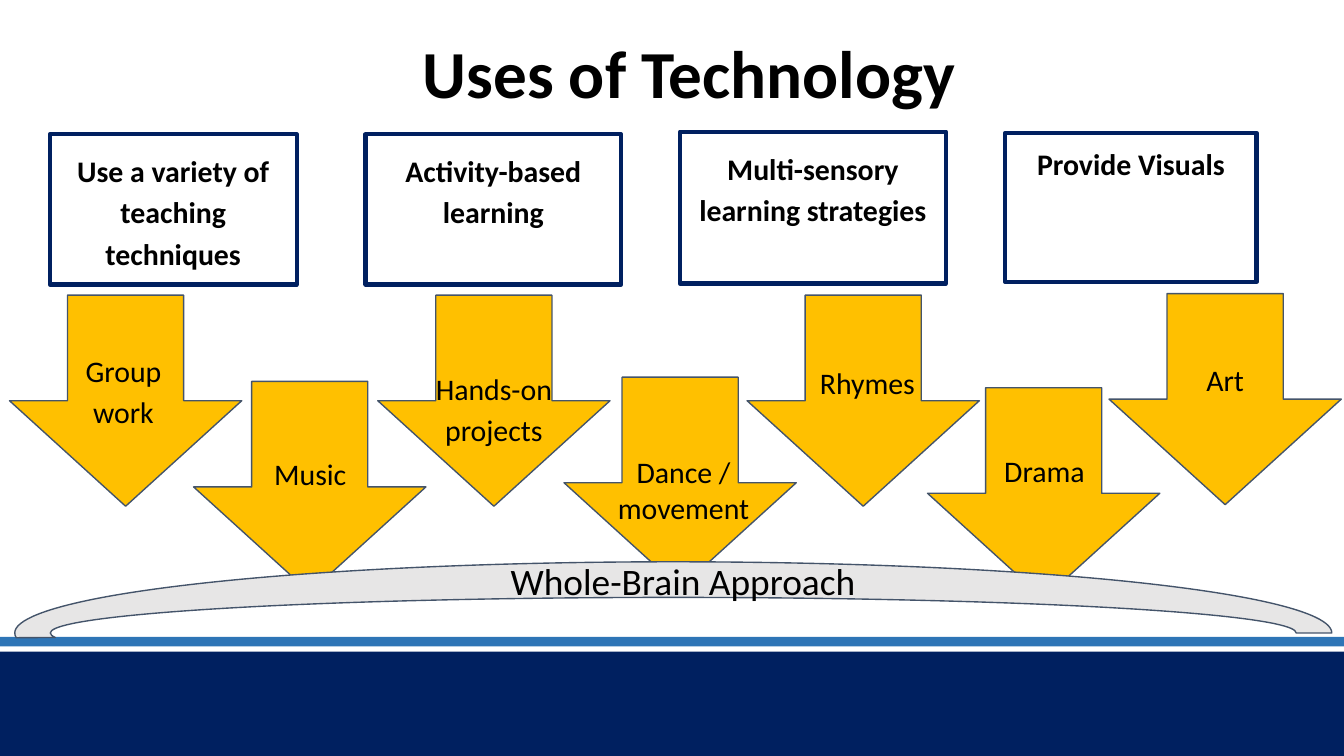
from pptx import Presentation
from pptx.dml.color import RGBColor
from pptx.enum.shapes import MSO_SHAPE
from pptx.enum.text import MSO_ANCHOR, PP_ALIGN
from pptx.util import Cm, Pt

RECTANGLE = MSO_SHAPE.RECTANGLE
DOWN_ARROW = MSO_SHAPE.DOWN_ARROW
BLOCK_ARC = MSO_SHAPE.BLOCK_ARC
CENTER = PP_ALIGN.CENTER
TOP = MSO_ANCHOR.TOP

# Content; every box is (left, top, width, height) in centimetres
COLORS = {"navy": "002060", "blue": "2E75B6", "gold": "FFC000",
          "gray": "E7E6E6", "slate": "44546A", "black": "000000"}
FONT = "Calibri"
WIDTH, HEIGHT = 25.4, 14.29
MARGIN = 0.25
ARROW_SIZE = (4.39, 3.99)

TITLE = ("Uses of Technology", (2.08, 0.51, 21.89, 2.77))
BANDS = [("navy", 12.32, 1.97), ("blue", 12.04, 0.18)]
STRATEGIES = [  # text, box, line spacing
    ("Use a variety of teaching techniques", (0.94, 2.54, 4.67, 2.84), 1.15),
    ("Activity-based learning", (6.91, 2.54, 4.83, 2.84), 1.15),
    ("Multi-sensory learning strategies", (12.85, 2.49, 5.03, 2.87), 1.15),
    ("Provide Visuals", (19, 2.51, 4.75, 2.82), 1),
]
ACTIVITIES = [  # text, arrow corner, label box, line spacing
    ("Group work", (0.18, 5.58), (1.27, 6.32, 2.13, 1.88), 1.15),
    ("Music", (3.66, 7.21), (4.47, 8.36, 2.79, 1.14), 1),
    ("Hands-on projects", (7.14, 5.58), (7.95, 6.65, 2.77, 2.11), 1.15),
    ("Dance / movement", (10.66, 7.13), (11.18, 8.33, 3.48, 2.11), 1),
    ("Rhymes", (14.12, 5.58), (14.96, 6.65, 2.87, 0.51), 1),
    ("Drama", (17.53, 7.33), (18.57, 8.31, 2.34, 0.76), 1),
    ("Art", (20.96, 5.55), (22.38, 6.58, 1.55, 0.53), 1),
]
ARC_BOX = (0.28, 10.62, 24.89, 2.69)
APPROACH = ("Whole-Brain Approach", (8.86, 10.31, 8.1, 0.53))


def color(name):
    return RGBColor.from_string(COLORS[name])


def lengths(box):
    return [Cm(value) for value in box]


def add_shape(shapes, kind, box, fill=None, line=None, line_width=0.75):
    shape = shapes.add_shape(kind, *lengths(box))
    shape.shadow.inherit = False
    if fill:
        shape.fill.solid()
        shape.fill.fore_color.rgb = color(fill)
    else:
        shape.fill.background()
    if line:
        shape.line.color.rgb = color(line)
        shape.line.width = Pt(line_width)
    else:
        shape.line.fill.background()
    return shape


def write(shape, text, size, bold=False, spacing=1):
    frame = shape.text_frame
    frame.word_wrap = True
    frame.vertical_anchor = TOP
    frame.margin_left = frame.margin_right = Cm(MARGIN)
    frame.margin_top = frame.margin_bottom = Cm(MARGIN)
    paragraph = frame.paragraphs[0]
    paragraph.text = text
    paragraph.alignment = CENTER
    paragraph.line_spacing = spacing
    font = paragraph.font
    font.name, font.size, font.bold = FONT, Pt(size), bold
    font.color.rgb = color("black")


def add_label(shapes, text, box, size, spacing=1):
    write(shapes.add_textbox(*lengths(box)), text, size, spacing=spacing)


presentation = Presentation()
presentation.slide_width = Cm(WIDTH)
presentation.slide_height = Cm(HEIGHT)
slide = presentation.slides.add_slide(presentation.slide_layouts[5])
shapes = slide.shapes

# Footer bands
for fill, top, height in BANDS:
    add_shape(shapes, RECTANGLE, (0, top, WIDTH, height), fill)

# Title
title = shapes.title
title_text, title_box = TITLE
title.left, title.top, title.width, title.height = lengths(title_box)
write(title, title_text, 36, bold=True, spacing=0.9)

# Strategy boxes
for text, box, spacing in STRATEGIES:
    strategy = add_shape(shapes, RECTANGLE, box, line="navy", line_width=2.25)
    write(strategy, text, 16, bold=True, spacing=spacing)

# Activity arrows, each grouped with its label
for text, corner, label_box, spacing in ACTIVITIES:
    group = shapes.add_group_shape()
    add_shape(group.shapes, DOWN_ARROW, corner + ARROW_SIZE, "gold", "slate")
    add_label(group.shapes, text, label_box, 16, spacing)

# Arc that joins the activities
arc = add_shape(shapes, BLOCK_ARC, ARC_BOX, "gray", "slate")
arc.adjustments[0] = 107.75
add_label(shapes, *APPROACH, 20)

presentation.save("out.pptx")
